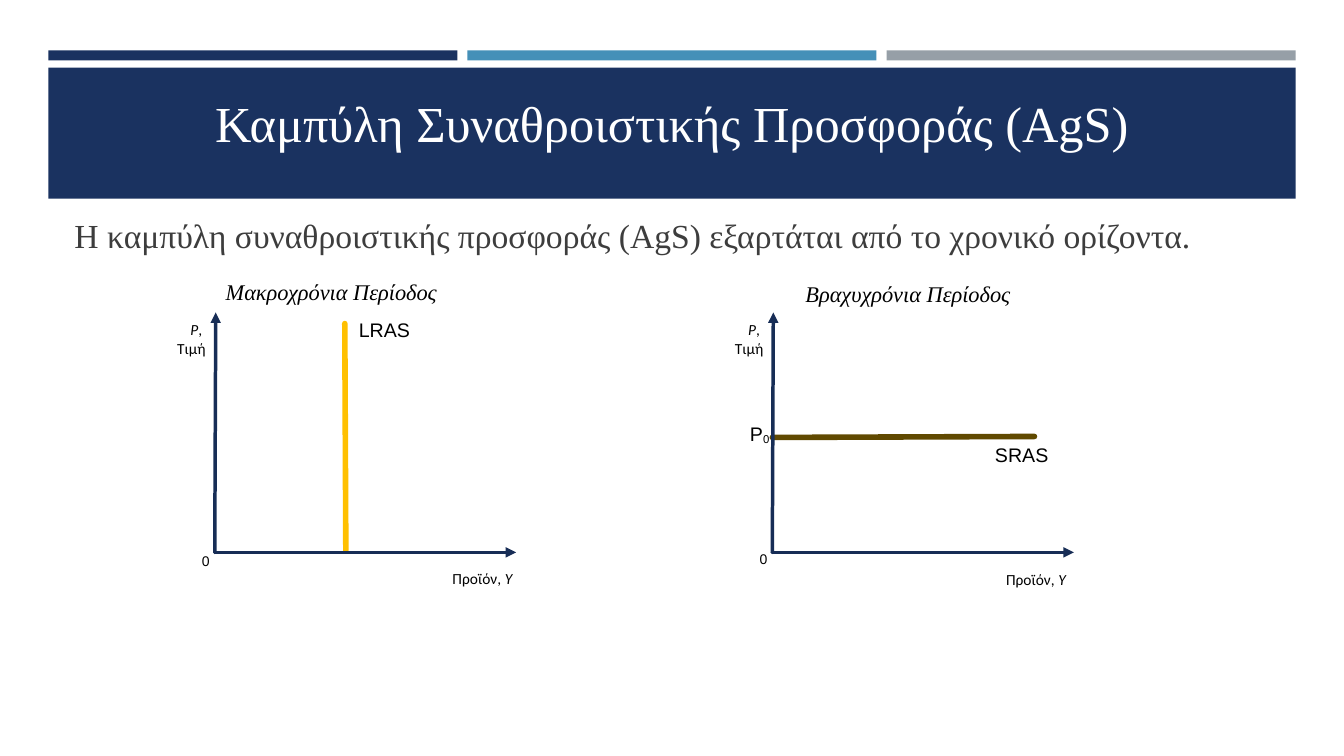
from lxml import etree
from pptx import Presentation
from pptx.dml.color import RGBColor
from pptx.enum.shapes import MSO_CONNECTOR, MSO_SHAPE
from pptx.enum.text import MSO_ANCHOR, PP_ALIGN
from pptx.oxml.ns import qn
from pptx.util import Inches, Pt

RECT = MSO_SHAPE.RECTANGLE
STRAIGHT = MSO_CONNECTOR.STRAIGHT
TOP, MIDDLE, BOTTOM = MSO_ANCHOR.TOP, MSO_ANCHOR.MIDDLE, MSO_ANCHOR.BOTTOM
LEFT, CENTER, RIGHT = PP_ALIGN.LEFT, PP_ALIGN.CENTER, PP_ALIGN.RIGHT

NAVY = RGBColor(0x1A, 0x32, 0x60)
BLUE = RGBColor(0x45, 0x90, 0xB8)
GRAY = RGBColor(0x96, 0x9F, 0xA7)
AXIS = RGBColor(0x17, 0x2D, 0x56)
GOLD = RGBColor(0xFF, 0xC0, 0x00)
BROWN = RGBColor(0x60, 0x49, 0x00)
TEXT = RGBColor(0x3D, 0x3D, 0x3D)
BLACK = RGBColor(0x00, 0x00, 0x00)
WHITE = RGBColor(0xFF, 0xFF, 0xFF)
SERIF, SANS, LABEL = "Times New Roman", "Arial", "Calibri"


def add_bar(s, x, y, w, h, color):
    sp = s.shapes.add_shape(RECT, Inches(x), Inches(y), Inches(w), Inches(h))
    sp.shadow.inherit = False
    sp.fill.solid()
    sp.fill.fore_color.rgb = color
    sp.line.fill.background()


def add_text(s, box, paragraphs, font, size, color=BLACK, align=LEFT,
             anchor=TOP, wrap=True, inset=0.1):
    sp = s.shapes.add_textbox(*(Inches(v) for v in box))
    tf = sp.text_frame
    tf.word_wrap = wrap
    tf.vertical_anchor = anchor
    tf.margin_left = tf.margin_right = Inches(inset)
    for i, runs in enumerate(paragraphs):
        p = tf.paragraphs[0] if i == 0 else tf.add_paragraph()
        p.alignment = align
        for text, style in runs:
            r = p.add_run()
            r.text = text
            r.font.name = font
            r.font.size = Pt(size)
            r.font.color.rgb = color
            r.font.italic = style == "italic"
            if style == "sub":
                r.font._element.set("baseline", "-10000")


def add_line(s, x1, y1, x2, y2, color, width, arrow=False):
    c = s.shapes.add_connector(STRAIGHT, Inches(x1), Inches(y1),
                               Inches(x2), Inches(y2))
    c.line.color.rgb = color
    c.line.width = Pt(width)
    ln = c.line._get_or_add_ln()
    ln.set("cap", "rnd")
    if arrow:
        etree.SubElement(ln, qn("a:tailEnd"), type="triangle")
    etree.SubElement(c._element.spPr, qn("a:effectLst"))


def add_header(s, x, y, w):
    gap = 0.1
    bar_w = (w - 2 * gap) / 3
    for i, color in enumerate((NAVY, BLUE, GRAY)):
        add_bar(s, x + i * (bar_w + gap), y, bar_w, 0.1, color)
    add_bar(s, x, y + 0.17, w, 1.3, NAVY)
    add_text(s, (x + 0.16, y + 0.19, w - 0.32, 0.87),
             [[("Καμπύλη Συναθροιστικής Προσφοράς (AgS)", "")]],
             SERIF, 36, WHITE, CENTER, BOTTOM)


def add_diagram(s, x, y, w, h, title, title_at, curve, color, labels,
                zero_y, output_at):
    x1, y1, x2, y2 = curve
    add_line(s, x + x1, y + y1, x + x2, y + y2, color, 4)
    add_line(s, x, y + h, x + 0.01, y, AXIS, 2.5, True)
    add_line(s, x, y + h, x + w, y + h, AXIS, 2.5, True)
    add_text(s, (x + title_at[0], y + title_at[1], 2.37, 0.37),
             [[(title, "italic")]], SERIF, 16, wrap=False)
    add_text(s, (x - 1.25, y + 0.03, 1.26, 0.34),
             [[("P", "italic"), (", ", "")], [("Τιμή", "")]],
             LABEL, 11, align=RIGHT)
    add_text(s, (x + output_at[0], y + output_at[1], 1, 0.29),
             [[("Προϊόν, ", ""), ("Y", "italic")]], LABEL, 11, align=RIGHT)
    add_text(s, (x - 0.19, y + zero_y, 0.16, 0.27), [[("0", "")]],
             SANS, 10, align=RIGHT, anchor=MIDDLE, inset=0.02)
    for dx, dy, label_w, runs in labels:
        add_text(s, (x + dx, y + dy, label_w, 0.34), [runs],
                 SANS, 14, wrap=False)


def main():
    prs = Presentation()
    prs.slide_width = Inches(13.33)
    prs.slide_height = Inches(7.5)
    s = prs.slides.add_slide(prs.slide_layouts[6])
    add_header(s, 0.48, 0.5, 12.37)
    add_text(s, (0.64, 2.08, 12.06, 0.69),
             [[("Η καμπύλη συναθροιστικής προσφοράς (AgS) εξαρτάται "
                "από το χρονικό ορίζοντα.", "")]], SERIF, 24, TEXT)
    add_diagram(s, 2.13, 3.1, 2.99, 2.38, "Μακροχρόνια Περίοδος",
                (0.01, -0.39), (1.29, 0.11, 1.3, 2.36), GOLD,
                [(1.33, 0.01, 0.72, [("LRAS", "")])],
                2.33, (2.05, 2.5))
    add_diagram(s, 7.66, 3.1, 2.99, 2.38, "Βραχυχρόνια Περίοδος",
                (0.23, -0.37), (0, 1.24, 2.6, 1.23), BROWN,
                [(2.11, 1.24, 0.8, [("SRAS", "")]),
                 (-0.32, 1.04, 0.43, [("P", ""), ("0", "sub")])],
                2.31, (2.01, 2.51))
    prs.save("out.pptx")


if __name__ == "__main__":
    main()
